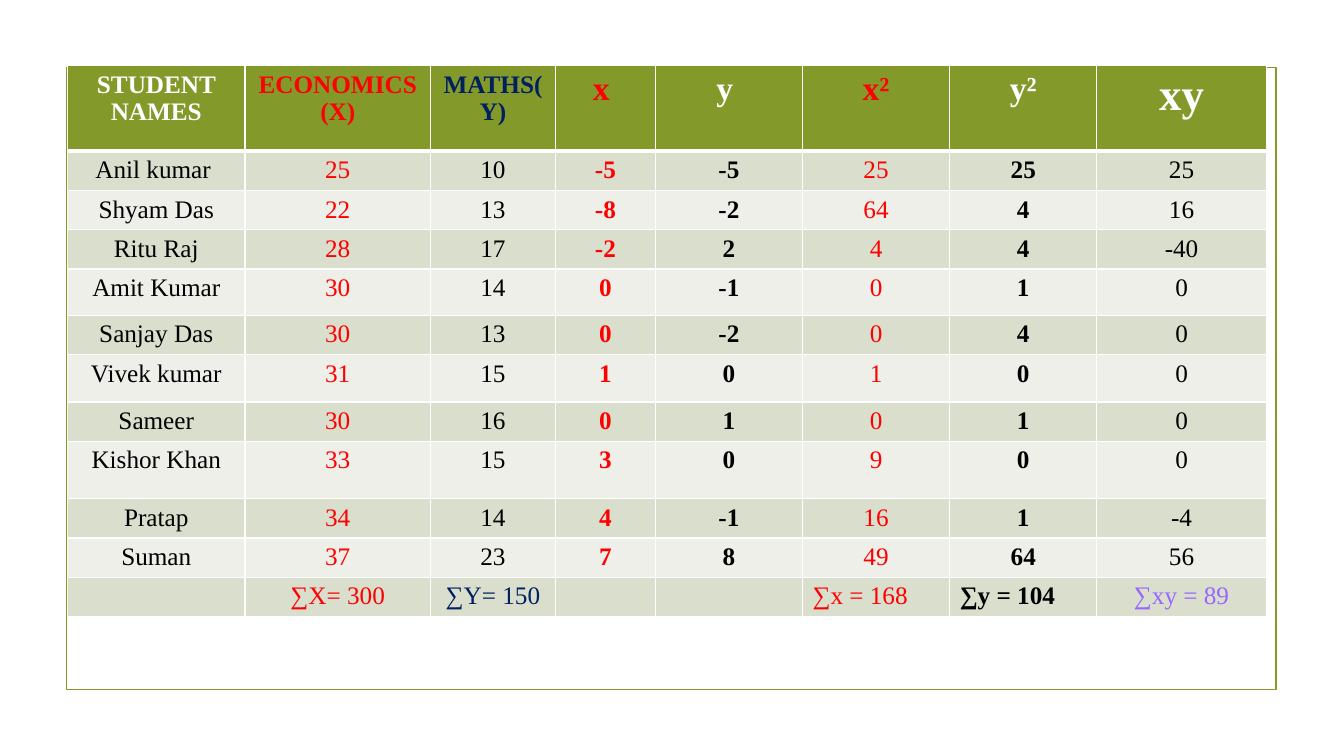
from lxml.etree import SubElement
from pptx import Presentation
from pptx.dml.color import RGBColor
from pptx.enum.shapes import MSO_SHAPE as Shape
from pptx.enum.text import PP_ALIGN as Align
from pptx.oxml.ns import qn
from pptx.util import Inches, Pt

FONT = "Times New Roman"
WHITE, BLACK, RED, NAVY, VIOLET = "FFFFFF", "000000", "FF0000", "002060", "9966FF"
OLIVE, BAND_DARK, BAND_LIGHT = "83992A", "D9DECD", "EDEFE8"


def color(hex_string):
    return RGBColor.from_string(hex_string)


def write(cell, text, size=18, ink=BLACK, bold=False, align=Align.CENTER):
    paragraph = cell.text_frame.paragraphs[0]
    paragraph.alignment = align
    if not text:
        # An empty cell keeps the row height of the table's font
        end = SubElement(paragraph._p, qn("a:endParaRPr"), sz=str(size * 100))
        SubElement(end, qn("a:latin"), typeface=FONT)
        return
    run = paragraph.add_run()
    run.text = text
    run.font.name, run.font.size, run.font.bold = FONT, Pt(size), bold
    run.font.color.rgb = color(ink)


presentation = Presentation()
presentation.slide_width, presentation.slide_height = Inches(13.33), Inches(7.5)
slide = presentation.slides.add_slide(presentation.slide_layouts[6])

# Frame behind the table
frame = slide.shapes.add_shape(
    Shape.RECTANGLE, Inches(0.66), Inches(0.67), Inches(12), Inches(6.17))
frame.shadow.inherit = False
frame.fill.background()
frame.line.color.rgb = color(OLIVE)
frame.line.width = Pt(1.25)

# Header: text, size, colour
header = [
    ("STUDENT NAMES", 18, WHITE), ("ECONOMICS(X)", 18, RED), ("MATHS(Y)", 18, NAVY),
    ("x ", 24, RED), ("y ", 24, WHITE), ("x²", 24, RED), ("y²", 24, WHITE),
    ("xy", 32, WHITE),
]
students = [
    ("Anil kumar ", 25, 10, -5, -5, 25, 25, 25),
    ("Shyam Das", 22, 13, -8, -2, 64, 4, 16),
    ("Ritu Raj", 28, 17, -2, 2, 4, 4, -40),
    ("Amit Kumar", 30, 14, 0, -1, 0, 1, 0),
    ("Sanjay Das", 30, 13, 0, -2, 0, 4, 0),
    ("Vivek kumar", 31, 15, 1, 0, 1, 0, 0),
    ("Sameer", 30, 16, 0, 1, 0, 1, 0),
    ("Kishor Khan", 33, 15, 3, 0, 9, 0, 0),
    ("Pratap", 34, 14, 4, -1, 16, 1, -4),
    ("Suman", 37, 23, 7, 8, 49, 64, 56),
]
totals = ("", "∑X= 300", "∑Y= 150", "", "", "∑x = 168", "∑y = 104", "∑xy = 89")
total_inks = {2: NAVY, 7: VIOLET}

# Column rules for the body
red_columns, bold_columns, left_totals = {1, 3, 5}, {3, 4, 6}, {5, 6}
column_widths = [1.76, 1.84, 1.24, 0.99, 1.46, 1.46, 1.46, 1.68]
row_heights = [0.85] + [0.39] * (len(students) + 1)
row_heights[4], row_heights[6], row_heights[8] = 0.46, 0.47, 0.57

# Table grid
table_frame = slide.shapes.add_table(
    len(row_heights), len(column_widths), Inches(0.67), Inches(0.65),
    Inches(sum(column_widths)), Inches(sum(row_heights)))
table = table_frame.table
for column, width in zip(table.columns, column_widths):
    column.width = Inches(width)
for row, height in zip(table.rows, row_heights):
    row.height = Inches(height)

# Cell text
for column, (text, size, ink) in enumerate(header):
    write(table.cell(0, column), text, size=size, ink=ink, bold=True)
for row, values in enumerate(students + [totals], start=1):
    is_total = row == len(students) + 1
    for column, value in enumerate(values):
        ink = RED if column in red_columns else BLACK
        if is_total:
            ink = total_inks.get(column, ink)
        align = Align.LEFT if is_total and column in left_totals else Align.CENTER
        write(table.cell(row, column), str(value), ink=ink,
              bold=column in bold_columns, align=align)

# White borders, heavier under the header, and banded fills
for row in range(len(row_heights)):
    for column in range(len(column_widths)):
        cell = table.cell(row, column)
        properties = cell._tc.get_or_add_tcPr()
        for side in ("lnL", "lnR", "lnT", "lnB"):
            heavy = (row, side) in {(0, "lnB"), (1, "lnT")}
            line = SubElement(properties, qn(f"a:{side}"), w=str(Pt(3 if heavy else 1)))
            SubElement(SubElement(line, qn("a:solidFill")), qn("a:srgbClr"), val=WHITE)
        cell.fill.solid()
        band = BAND_DARK if row % 2 else BAND_LIGHT
        cell.fill.fore_color.rgb = color(band if row else OLIVE)

presentation.save("out.pptx")
